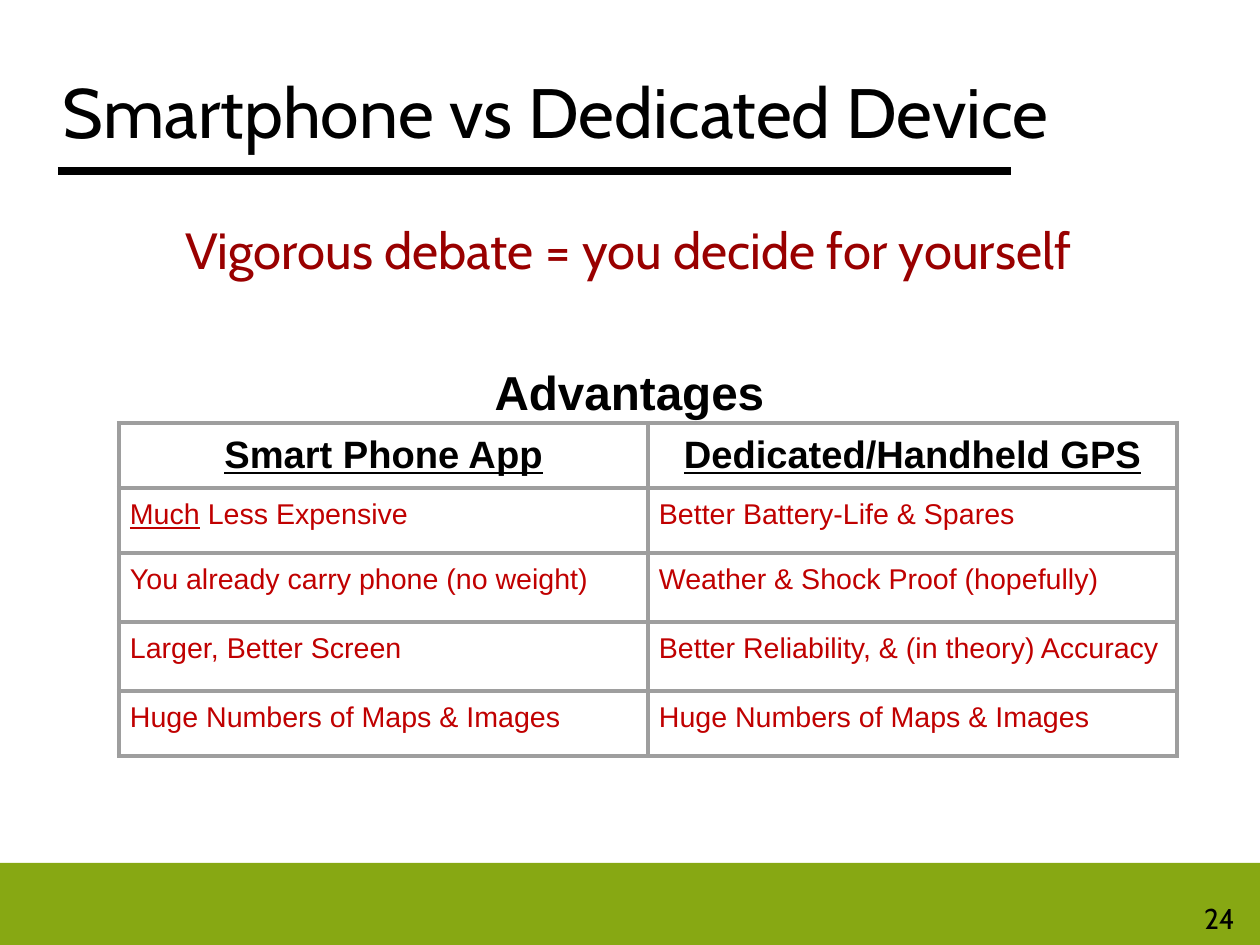
"""Build the slide comparing smartphones with dedicated GPS devices."""
from dataclasses import dataclass

from lxml.etree import SubElement
from pptx import Presentation
from pptx.dml.color import RGBColor
from pptx.enum.shapes import MSO_CONNECTOR, MSO_SHAPE
from pptx.enum.text import MSO_ANCHOR, PP_ALIGN
from pptx.oxml.ns import qn
from pptx.slide import Slide
from pptx.util import Emu, Pt

EMU_PER_PX = 8000
COLOURS = {
    "paper": "FFFFFF",
    "ink": "000000",
    "footer": "87A813",
    "debate": "990000",
    "advantage": "C00000",
    "border": "9E9E9E",
}
BORDER_POINTS = 3
CELL_INSET = 11
COLUMN_WIDTH = 529
ROW_HEIGHTS = (65, 65, 69, 69, 65)


@dataclass(frozen=True)
class Span:
    text: str
    size: int
    font: str
    colour: str
    bold: bool = False
    underline: bool = False


@dataclass(frozen=True)
class Label:
    span: Span
    left: int
    top: int
    width: int
    height: int
    insets: tuple[int, int, int, int]
    align: PP_ALIGN
    anchor: MSO_ANCHOR = MSO_ANCHOR.TOP
    line_spacing: float = 1.0


def header(text: str) -> tuple[Span, ...]:
    """Return the spans of a column heading."""
    return (Span(text, 24, "Arial", "ink", bold=True, underline=True),)


def advantage(text: str, stressed: str = "") -> tuple[Span, ...]:
    """Return the spans of one advantage, with an optional underlined start."""
    plain = Span(text, 18, "Arial", "advantage")
    if not stressed:
        return (plain,)
    return (Span(stressed, 18, "Arial", "advantage", underline=True), plain)


LABELS = (
    Label(Span("Smartphone vs Dedicated Device", 44, "Cabin", "ink"),
          63, 38, 1131, 155, (0, 0, 0, 0), PP_ALIGN.LEFT, MSO_ANCHOR.MIDDLE, 0.93),
    Label(Span("Vigorous debate = you decide for yourself", 32, "Cabin", "debate"),
          63, 221, 1131, 79, (0, 3, 0, 0), PP_ALIGN.CENTER, line_spacing=0.93),
    Label(Span("Advantages", 30, "Arial", "ink", bold=True),
          413, 352, 433, 54, (11, 11, 11, 11), PP_ALIGN.CENTER),
    Label(Span("24", 18, "Cabin", "ink"),
          1098, 895, 162, 43, (11, 6, 25, 6), PP_ALIGN.RIGHT),
)
ROWS = (
    (header("Smart Phone App"), header("Dedicated/Handheld GPS")),
    (advantage(" Less Expensive", "Much"), advantage("Better Battery-Life & Spares")),
    (advantage("You already carry phone (no weight)"),
     advantage("Weather & Shock Proof (hopefully)")),
    (advantage("Larger, Better Screen"),
     advantage("Better Reliability, & (in theory) Accuracy")),
    (advantage("Huge Numbers of Maps & Images"),
     advantage("Huge Numbers of Maps & Images")),
)


def px(length: int) -> Emu:
    """Turn a length in px into EMU."""
    return Emu(length * EMU_PER_PX)


def colour(name: str) -> RGBColor:
    """Return the named colour."""
    return RGBColor.from_string(COLOURS[name])


def add_span(para, span: Span) -> None:
    """Append one formatted run to a paragraph."""
    run = para.add_run()
    run.text = span.text
    font = run.font
    font.size, font.name = Pt(span.size), span.font
    font.bold, font.underline = span.bold, span.underline
    font.color.rgb = colour(span.colour)


def add_label(page: Slide, label: Label) -> None:
    """Draw a text box holding one paragraph."""
    box = page.shapes.add_textbox(
        px(label.left), px(label.top), px(label.width), px(label.height))
    frame = box.text_frame
    frame.word_wrap = True
    frame.vertical_anchor = label.anchor
    (frame.margin_left, frame.margin_top,
     frame.margin_right, frame.margin_bottom) = map(px, label.insets)
    para = frame.paragraphs[0]
    para.alignment = label.align
    para.line_spacing = label.line_spacing
    add_span(para, label.span)


def add_footer(page: Slide) -> None:
    """Draw the green band along the bottom edge."""
    band = page.shapes.add_shape(MSO_SHAPE.RECTANGLE, 0, px(863), px(1260), px(82))
    band.shadow.inherit = False
    band.fill.solid()
    band.fill.fore_color.rgb = colour("footer")
    band.line.fill.background()


def add_title_rule(page: Slide) -> None:
    """Draw the thick line under the title."""
    rule = page.shapes.add_connector(
        MSO_CONNECTOR.STRAIGHT, px(58), px(171), px(1011), px(171))
    rule.line.width = Pt(5)
    rule.line.color.rgb = colour("ink")
    SubElement(rule._element.spPr, qn("a:effectLst"))


def add_borders(cell) -> None:
    """Outline a table cell on all four sides."""
    properties = cell._tc.get_or_add_tcPr()
    for side in ("lnL", "lnR", "lnT", "lnB"):
        line = SubElement(properties, qn(f"a:{side}"), w=str(Pt(BORDER_POINTS)))
        fill = SubElement(line, qn("a:solidFill"))
        SubElement(fill, qn("a:srgbClr"), val=COLOURS["border"])


def add_comparison(page: Slide) -> None:
    """Draw the table of advantages."""
    table = page.shapes.add_table(
        len(ROWS), 2, px(119), px(423), px(2 * COLUMN_WIDTH), px(sum(ROW_HEIGHTS))).table
    table.first_row = table.horz_banding = False
    for column in table.columns:
        column.width = px(COLUMN_WIDTH)
    for row_index, (row, height) in enumerate(zip(ROWS, ROW_HEIGHTS)):
        table.rows[row_index].height = px(height)
        for column_index, spans in enumerate(row):
            cell = table.cell(row_index, column_index)
            add_borders(cell)
            cell.fill.background()
            cell.margin_left = cell.margin_right = px(CELL_INSET)
            cell.margin_top = cell.margin_bottom = px(CELL_INSET)
            para = cell.text_frame.paragraphs[0]
            para.alignment = PP_ALIGN.LEFT if row_index else PP_ALIGN.CENTER
            for span in spans:
                add_span(para, span)


def main() -> None:
    """Create and save the deck."""
    deck = Presentation()
    deck.slide_width, deck.slide_height = px(1260), px(945)
    page = deck.slides.add_slide(deck.slide_layouts[6])
    page.background.fill.solid()
    page.background.fill.fore_color.rgb = colour("paper")
    add_footer(page)
    add_title_rule(page)
    add_comparison(page)
    for label in LABELS:
        add_label(page, label)
    deck.save("out.pptx")


if __name__ == "__main__":
    main()
